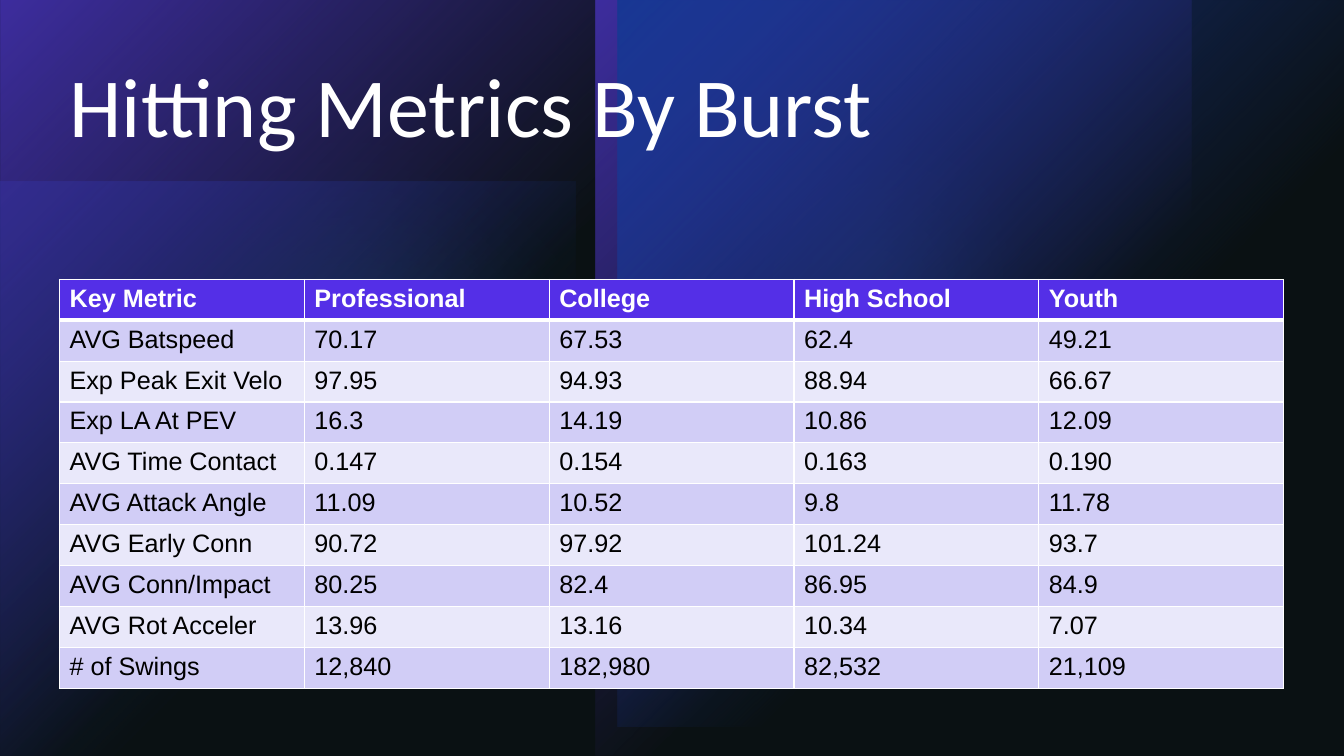
from typing import NamedTuple

import pptx
import pptx.dml.color
import pptx.enum.shapes
import pptx.enum.text
import pptx.oxml
import pptx.oxml.ns
import pptx.util
from lxml import etree

Cm = pptx.util.Cm
Pt = pptx.util.Pt
RGBColor = pptx.dml.color.RGBColor
MSO_SHAPE = pptx.enum.shapes.MSO_SHAPE
qn = pptx.oxml.ns.qn

BLACK = RGBColor(0x00, 0x00, 0x00)
WHITE = RGBColor(0xFF, 0xFF, 0xFF)
VIOLET = RGBColor(0x54, 0x2F, 0xE7)
BLUE = RGBColor(0x17, 0x40, 0xD5)
SKY = RGBColor(0x29, 0xA1, 0xE7)
SLATE = RGBColor(0x1B, 0x2B, 0x30)
BAND_DARK = RGBColor(0xD1, 0xCD, 0xF6)
BAND_LIGHT = RGBColor(0xE9, 0xE8, 0xFA)

SLIDE_W, SLIDE_H = 33.87, 19.05
MARGIN = 1.5
COL_W, ROW_H = 6.17, 1.03
SOFT_EDGE = Pt(100)


class Panel(NamedTuple):
    """A rectangle whose colour fades out from one corner."""
    left: float
    top: float
    width: float
    height: float
    color: RGBColor
    opacity: int = 100
    rotation: int = 0
    flip_h: bool = False


class Tint(NamedTuple):
    """A translucent plain shape, optionally with a soft edge."""
    kind: MSO_SHAPE
    left: float
    top: float
    width: float
    height: float
    color: RGBColor
    opacity: int
    soft: bool = False


BACKDROP = [
    Panel(0, 4.57, 14.5, 14.5, BLUE, opacity=60),
    Tint(MSO_SHAPE.OVAL, 15.98, 1.09, 11.99, 11.99, SKY, 60, soft=True),
    Tint(MSO_SHAPE.OVAL, 0, 1.42, 17.63, 17.63, SKY, 20, soft=True),
    Panel(0, 0, 15.01, SLIDE_H, VIOLET, rotation=180),
    Panel(15.01, 0, 15.01, SLIDE_H, VIOLET, rotation=180, flip_h=True),
    Panel(15.57, 0, 18.31, 18.31, BLUE, rotation=180),
    Tint(MSO_SHAPE.RECTANGLE, 0, 0, SLIDE_W, SLIDE_H, SLATE, 40),
]

METRICS = [
    ("Key Metric", "Professional", "College", "High School", "Youth"),
    ("AVG Batspeed", "70.17", "67.53", "62.4", "49.21"),
    ("Exp Peak Exit Velo", "97.95", "94.93", "88.94", "66.67"),
    ("Exp LA At PEV", "16.3", "14.19", "10.86", "12.09"),
    ("AVG Time Contact", "0.147", "0.154", "0.163", "0.190"),
    ("AVG Attack Angle", "11.09", "10.52", "9.8", "11.78"),
    ("AVG Early Conn", "90.72", "97.92", "101.24", "93.7"),
    ("AVG Conn/Impact", "80.25", "82.4", "86.95", "84.9"),
    ("AVG Rot Acceler", "13.96", "13.16", "10.34", "7.07"),
    ("# of Swings", "12,840", "182,980", "82,532", "21,109"),
]


def add_plain_shape(s, kind, left: float, top: float, width: float, height: float):
    sp = s.shapes.add_shape(kind, Cm(left), Cm(top), Cm(width), Cm(height))
    sp.shadow.inherit = False
    sp.line.fill.background()
    return sp


def add_panel(s, panel: Panel) -> None:
    sp = add_plain_shape(s, MSO_SHAPE.RECTANGLE, *panel[:4])
    sp.rotation = panel.rotation
    xfrm = sp.element.spPr.find(qn("a:xfrm"))
    xfrm.set("flipV", "1")
    if panel.flip_h:
        xfrm.set("flipH", "1")
    # Radial fade centred on the top left corner
    stops = "".join(
        f'<a:gs pos="{pos * 1000}"><a:srgbClr val="{panel.color}">'
        f'<a:alpha val="{alpha * 1000}"/></a:srgbClr></a:gs>'
        for pos, alpha in ((0, panel.opacity), (60, 0)))
    fade = pptx.oxml.parse_xml(
        f'<a:gradFill {pptx.oxml.ns.nsdecls("a")} rotWithShape="1">'
        f'<a:gsLst>{stops}</a:gsLst><a:path path="circle">'
        '<a:fillToRect r="100000" b="100000"/></a:path></a:gradFill>')
    sp.element.spPr.find(qn("a:prstGeom")).addnext(fade)


def add_tint(s, tint: Tint) -> None:
    sp = add_plain_shape(s, *tint[:5])
    sp.fill.solid()
    sp.fill.fore_color.rgb = tint.color
    color = sp.element.spPr.find(qn("a:solidFill")).find(qn("a:srgbClr"))
    etree.SubElement(color, qn("a:alpha"), val=str(tint.opacity * 1000))
    if tint.soft:
        effects = sp.element.spPr.find(qn("a:effectLst"))
        etree.SubElement(effects, qn("a:softEdge"), rad=str(SOFT_EDGE))


def add_run(p, text: str, font: str, size: int, color: RGBColor, bold: bool = False) -> None:
    r = p.add_run()
    r.text = text
    r.font.name = font
    r.font.size = Pt(size)
    r.font.bold = bold
    r.font.color.rgb = color


def set_borders(cell, top: int, bottom: int) -> None:
    tc_pr = cell._tc.get_or_add_tcPr()
    for side, width in (("L", 1), ("R", 1), ("T", top), ("B", bottom)):
        ln = etree.SubElement(tc_pr, qn(f"a:ln{side}"), w=str(Pt(width)))
        fill = etree.SubElement(ln, qn("a:solidFill"))
        etree.SubElement(fill, qn("a:srgbClr"), val=str(WHITE))


def add_metrics_table(s) -> None:
    rows, cols = len(METRICS), len(METRICS[0])
    table = s.shapes.add_table(rows, cols, Cm(MARGIN), Cm(7.04),
                               Cm(COL_W * cols), Cm(ROW_H * rows)).table
    for column in table.columns:
        column.width = Cm(COL_W)
    for i, values in enumerate(METRICS):
        table.rows[i].height = Cm(ROW_H)
        header = i == 0
        band = VIOLET if header else BAND_DARK if i % 2 else BAND_LIGHT
        for j, value in enumerate(values):
            cell = table.cell(i, j)
            set_borders(cell, top=3 if i == 1 else 1, bottom=3 if header else 1)
            cell.fill.solid()
            cell.fill.fore_color.rgb = band
            add_run(cell.text_frame.paragraphs[0], value, "Arial", 18,
                    WHITE if header else BLACK, bold=header)


def format_title(s) -> None:
    title = s.shapes.title
    title.left, title.top = Cm(MARGIN), Cm(MARGIN)
    title.width, title.height = Cm(30.84), Cm(5.03)
    tf = title.text_frame
    tf.word_wrap = True
    tf.vertical_anchor = pptx.enum.text.MSO_ANCHOR.TOP
    p = tf.paragraphs[0]
    p.alignment = pptx.enum.text.PP_ALIGN.LEFT
    p.line_spacing = 0.9
    add_run(p, "Hitting Metrics By Burst", "Calibri", 60, WHITE)
    # Bring the title in front of the backdrop
    title.element.getparent().append(title.element)


def main() -> None:
    prs = pptx.Presentation()
    prs.slide_width, prs.slide_height = Cm(SLIDE_W), Cm(SLIDE_H)
    s = prs.slides.add_slide(prs.slide_layouts[5])

    # Backdrop
    s.background.fill.solid()
    s.background.fill.fore_color.rgb = BLACK
    for part in BACKDROP:
        if isinstance(part, Panel):
            add_panel(s, part)
        else:
            add_tint(s, part)

    # Title and table
    format_title(s)
    add_metrics_table(s)
    prs.save("out.pptx")


if __name__ == "__main__":
    main()
